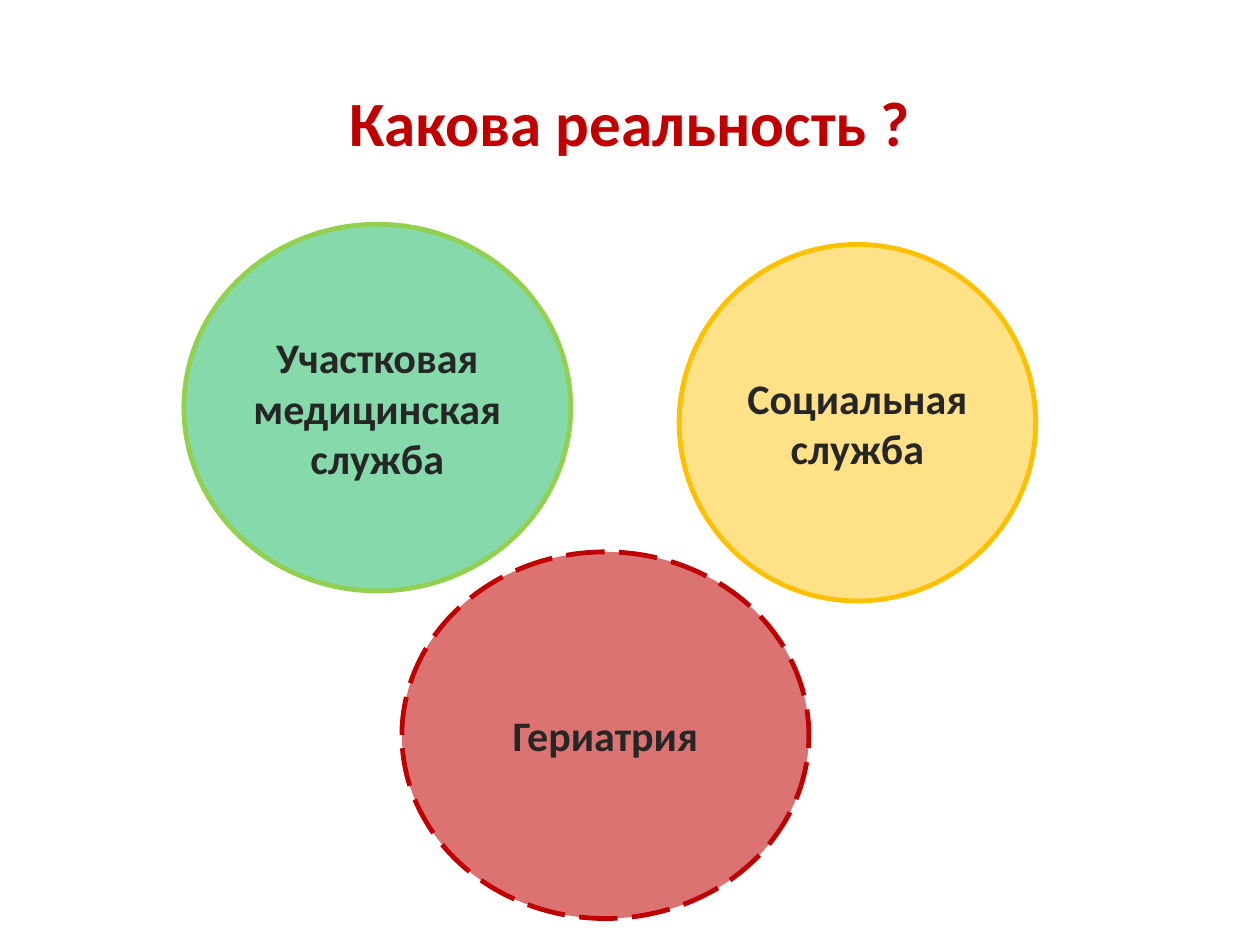
from lxml.etree import SubElement
from pptx import Presentation
from pptx.dml.color import RGBColor
from pptx.enum.dml import MSO_LINE
from pptx.enum.shapes import MSO_SHAPE
from pptx.enum.text import MSO_ANCHOR, PP_ALIGN
from pptx.oxml.ns import qn
from pptx.util import Inches, Pt

COLORS = {"red": "C00000", "amber": "FFC000", "green": "00B050",
          "lime": "92D050", "text": "262626"}
TITLE = "Какова реальность ?"
# paragraphs, (left, top, width, height), fill, opacity %, line, dash
SERVICES = [
    (["Гериатрия"], (3.19, 4.38, 3.23, 2.91), "red", 55, "red", MSO_LINE.LONG_DASH),
    (["Социальная служба"], (5.39, 1.94, 2.83, 2.83), "amber", 47, "amber", None),
    (["Участковая", "медицинская служба"], (1.46, 1.78, 3.07, 2.91),
     "green", 48, "lime", None),
]


def rgb(name):
    return RGBColor.from_string(COLORS[name])


def write(sp, lines, size, color):
    tf = sp.text_frame
    tf.word_wrap = True
    tf.vertical_anchor = MSO_ANCHOR.MIDDLE
    font = {"name": "Calibri", "size": Pt(size), "bold": True}
    for i, line in enumerate(lines):
        p = tf.paragraphs[0] if i == 0 else tf.add_paragraph()
        p.alignment = PP_ALIGN.CENTER
        r = p.add_run()
        r.text = line
        for key, value in font.items():
            setattr(r.font, key, value)
        r.font.color.rgb = rgb(color)


def add_service(s, lines, box, fill, opacity, line, dash):
    sp = s.shapes.add_shape(MSO_SHAPE.OVAL, *map(Inches, box))
    sp.shadow.inherit = False
    sp.fill.solid()
    sp.fill.fore_color.rgb = rgb(fill)
    # Fill transparency
    clr = sp.fill._xPr.find(qn("a:solidFill")).find(qn("a:srgbClr"))
    SubElement(clr, qn("a:alpha"), val=str(opacity * 1000))
    sp.line.color.rgb = rgb(line)
    sp.line.width = Pt(2.75)
    if dash:
        sp.line.dash_style = dash
    write(sp, lines, 24, "text")


def main():
    prs = Presentation()
    prs.slide_width, prs.slide_height = Inches(10), Inches(7.5)
    s = prs.slides.add_slide(prs.slide_layouts[6])

    # Overlapping circles, back to front
    for service in SERVICES:
        add_service(s, *service)

    # Title
    title = s.shapes.add_textbox(0, Inches(0.3), prs.slide_width, Inches(1.32))
    write(title, [TITLE], 36, "red")

    prs.save("out.pptx")


if __name__ == "__main__":
    main()
